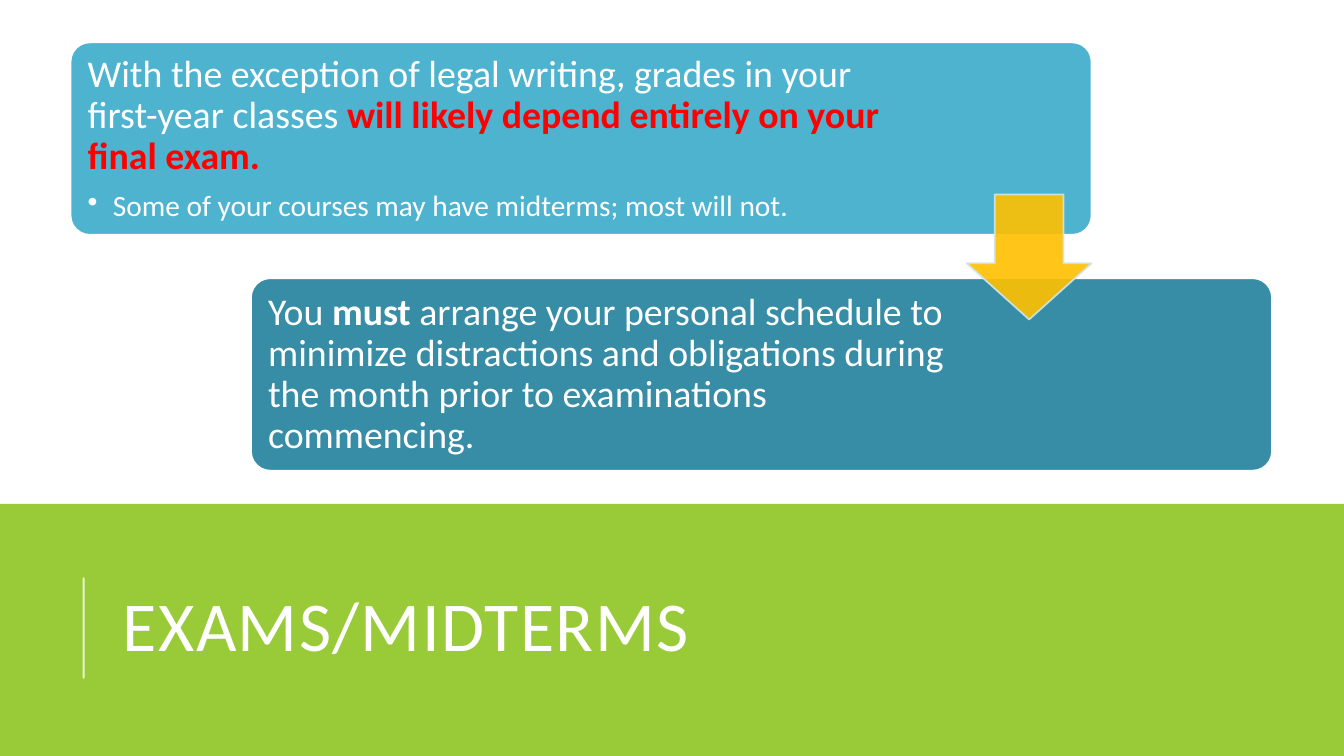
from dataclasses import dataclass

from lxml.etree import SubElement
from pptx import Presentation
from pptx.dml.color import RGBColor
from pptx.enum.shapes import MSO_CONNECTOR, MSO_SHAPE
from pptx.enum.text import MSO_ANCHOR, PP_ALIGN
from pptx.oxml.ns import qn
from pptx.util import Pt


@dataclass(frozen=True)
class Theme:
    font: str = "Calibri"
    white: str = "FFFFFF"
    alert: str = "FF0000"
    band: str = "99CB38"
    first_card: str = "4EB3CF"
    second_card: str = "378DA6"
    arrow: str = "FFC000"
    arrow_edge: str = "D0E5ED"
    title_size: float = 50
    lead_size: float = 27
    detail_size: float = 21


THEME = Theme()


@dataclass(frozen=True)
class Box:
    left: float
    top: float
    width: float
    height: float

    def lengths(self) -> list:
        return [Pt(n) for n in (self.left, self.top, self.width, self.height)]


@dataclass(frozen=True)
class Phrase:
    text: str
    bold: bool = False
    color: str = THEME.white


@dataclass(frozen=True)
class Paragraph:
    phrases: tuple
    size: float = THEME.lead_size
    line_spacing: float = 0.9
    space_after: float = 9.45
    bullet: bool = False
    tracking: float = 0


@dataclass(frozen=True)
class Card:
    left: float
    top: float
    text_width: float
    fill: str
    paragraphs: tuple


CARD_WIDTH, CARD_HEIGHT = 729.36, 137.52
CARD_PADDING = 4.32
CARD_TEXT_HEIGHT = 129.6
CARD_INSET = 7.92
BULLET_INDENT = 18

CARDS = (
    Card(50.4, 30.24, 586.8, THEME.first_card, (
        Paragraph((
            Phrase("With the exception of legal writing, grades in your first-year classes "),
            Phrase("will likely depend entirely on your final exam.", True, THEME.alert),
        )),
        Paragraph((Phrase("Some of your courses may have midterms; most will not."),),
                  THEME.detail_size, space_after=3.15, bullet=True),
    )),
    Card(179.28, 198.72, 503.28, THEME.second_card, (
        Paragraph((
            Phrase("You "),
            Phrase("must", True),
            Phrase(" arrange your personal schedule to minimize distractions and "
                   "obligations during the month prior to examinations commencing."),
        )),
    )),
)
TITLE = Paragraph((Phrase("EXAMS/MIDTERMS"),), THEME.title_size,
                  line_spacing=0.8, space_after=0, tracking=1)


def set_opacity(color_format_owner, percent: int) -> None:
    """Make the single solid colour below the given element translucent."""
    color = color_format_owner.find(".//" + qn("a:srgbClr"))
    SubElement(color, qn("a:alpha"), val=str(percent * 1000))


def add_block(slide, kind: MSO_SHAPE, box: Box, fill: str, edge: str = "",
              adjustments: tuple = ()):
    block = slide.shapes.add_shape(kind, *box.lengths())
    block.shadow.inherit = False
    for index, value in enumerate(adjustments):
        block.adjustments[index] = value
    block.fill.solid()
    block.fill.fore_color.rgb = RGBColor.from_string(fill)
    if edge:
        block.line.color.rgb = RGBColor.from_string(edge)
        block.line.width = Pt(1.25)
    else:
        block.line.fill.background()
    return block


def add_text(slide, box: Box, paragraphs: tuple, inset: float) -> None:
    frame = slide.shapes.add_textbox(*box.lengths()).text_frame
    frame.word_wrap = True
    frame.vertical_anchor = MSO_ANCHOR.MIDDLE
    frame.margin_left = frame.margin_right = Pt(inset)
    frame.margin_top = frame.margin_bottom = Pt(inset)
    for index, content in enumerate(paragraphs):
        line = frame.add_paragraph() if index else frame.paragraphs[0]
        line.alignment = PP_ALIGN.LEFT
        line.line_spacing = content.line_spacing
        line.space_after = Pt(content.space_after)
        if content.bullet:
            line.level = 1
            properties = line._p.get_or_add_pPr()
            properties.set("marL", str(Pt(BULLET_INDENT)))
            properties.set("indent", str(-Pt(BULLET_INDENT)))
            SubElement(properties, qn("a:buChar"), char="•")
        for phrase in content.phrases:
            run = line.add_run()
            run.text = phrase.text
            run.font.name = THEME.font
            run.font.size = Pt(content.size)
            run.font.bold = phrase.bold
            run.font.color.rgb = RGBColor.from_string(phrase.color)
            if content.tracking:
                run.font._element.set("spc", str(int(content.tracking * 100)))


def add_card(slide, card: Card) -> None:
    add_block(slide, MSO_SHAPE.ROUNDED_RECTANGLE,
              Box(card.left, card.top, CARD_WIDTH, CARD_HEIGHT),
              card.fill, THEME.white, (0.1,))
    add_text(slide, Box(card.left + CARD_PADDING, card.top + CARD_PADDING,
                        card.text_width, CARD_TEXT_HEIGHT),
             card.paragraphs, CARD_INSET)


def add_title_rule(slide, x: float, top: float, bottom: float) -> None:
    rule = slide.shapes.add_connector(MSO_CONNECTOR.STRAIGHT,
                                      Pt(x), Pt(bottom), Pt(x), Pt(top))
    rule.line.color.rgb = RGBColor.from_string(THEME.white)
    rule.line.width = Pt(1.5)
    set_opacity(rule.line._get_or_add_ln(), 80)
    SubElement(rule._element.spPr, qn("a:effectLst"))


def add_down_arrow(slide, box: Box) -> None:
    arrow = add_block(slide, MSO_SHAPE.DOWN_ARROW, box, THEME.arrow,
                      THEME.arrow_edge, (0.55, 0.45))
    set_opacity(arrow._element.spPr.find(qn("a:solidFill")), 90)
    set_opacity(arrow.line._get_or_add_ln(), 90)


def main() -> None:
    deck = Presentation()
    deck.slide_width, deck.slide_height = Pt(960), Pt(540)
    slide = deck.slides.add_slide(deck.slide_layouts[6])
    add_block(slide, MSO_SHAPE.RECTANGLE, Box(0, 360, 960, 180), THEME.band)
    add_text(slide, Box(80.64, 391.68, 765.36, 118.08), (TITLE,), 7.2)
    add_title_rule(slide, 59.76, 412.56, 484.56)
    for card in CARDS:
        add_card(slide, card)
    add_down_arrow(slide, Box(690.48, 138.96, 89.28, 89.28))
    deck.save("out.pptx")


if __name__ == "__main__":
    main()
